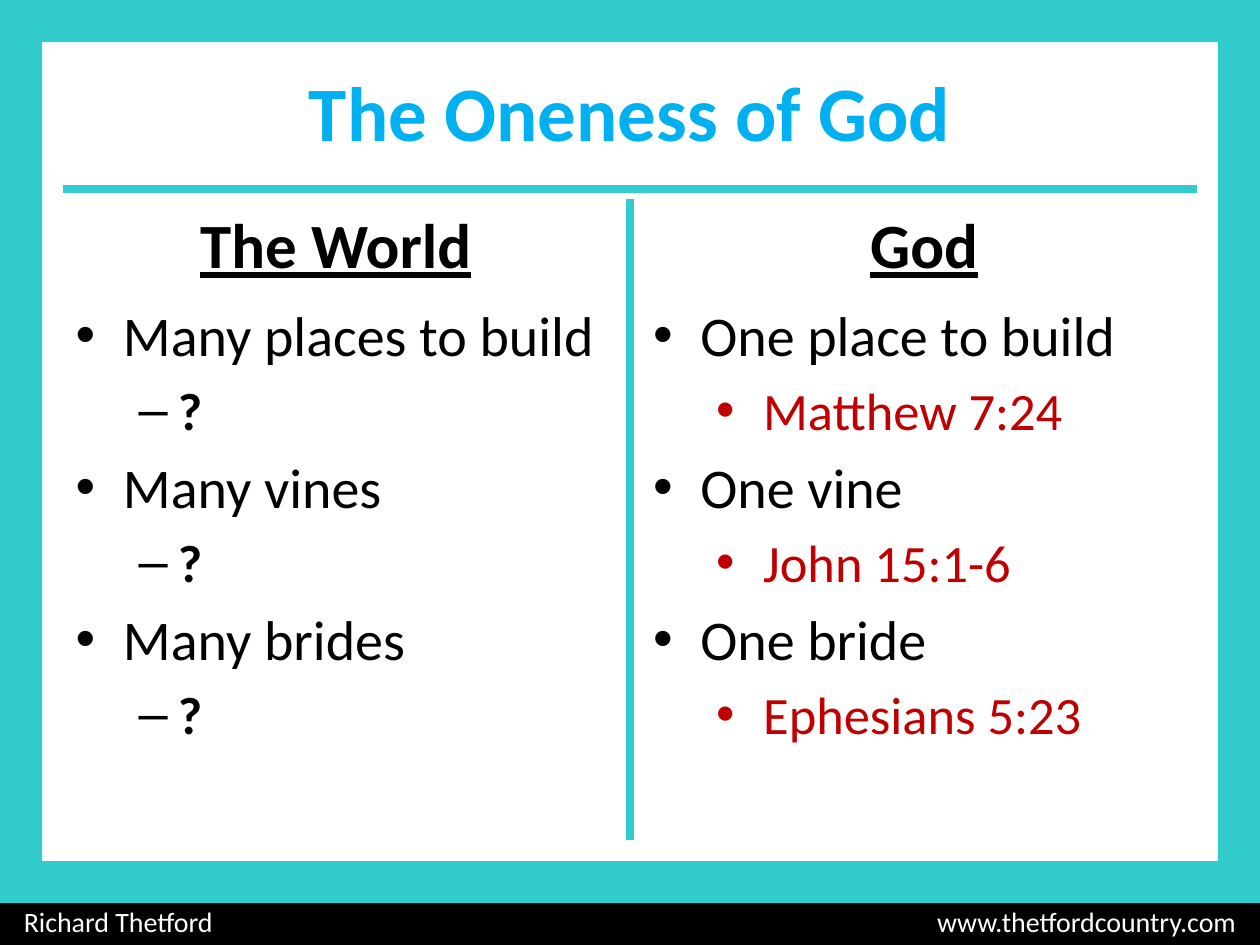
from lxml.etree import SubElement
from pptx import Presentation
from pptx.dml.color import RGBColor
from pptx.enum.shapes import MSO_CONNECTOR, MSO_SHAPE
from pptx.enum.text import MSO_ANCHOR, MSO_AUTO_SIZE, PP_ALIGN
from pptx.oxml.ns import qn
from pptx.util import Cm, Pt

TEAL = RGBColor(0x33, 0xCC, 0xCC)
SKY = RGBColor(0x00, 0xB0, 0xF0)
RED = RGBColor(0xC0, 0x00, 0x00)
BLACK = RGBColor(0, 0, 0)
WHITE = RGBColor(0xFF, 0xFF, 0xFF)

WIDTH, HEIGHT = 25.4, 19.05
EDGE = 0.85
MARGIN = 1.27
FOOTER_TOP = 18.1


class SlideBuilder:
    font_name = "Calibri"

    def __init__(self, slide):
        self.slide = slide

    def style(self, paragraph, size, color, bold=False, underline=None):
        font = paragraph.font
        font.name = self.font_name
        font.size = Pt(size)
        font.bold = bold
        font.underline = underline
        font.color.rgb = color

    def place(self, shape, left, top, width, height):
        shape.left, shape.top = Cm(left), Cm(top)
        shape.width, shape.height = Cm(width), Cm(height)

    def title(self, text, *box):
        title = self.slide.shapes.title
        self.place(title, *box)
        frame = title.text_frame
        frame.text = text
        frame.vertical_anchor = MSO_ANCHOR.MIDDLE
        frame.paragraphs[0].alignment = PP_ALIGN.CENTER
        self.style(frame.paragraphs[0], 44, SKY, bold=True)

    def band(self, color, *box):
        band = self.slide.shapes.add_shape(MSO_SHAPE.RECTANGLE, *map(Cm, box))
        band.shadow.inherit = False
        band.fill.solid()
        band.fill.fore_color.rgb = color
        band.line.fill.background()
        return band

    def footer(self, author, site, *box):
        inset = 0.48
        frame = self.band(BLACK, *box).text_frame
        frame.margin_left, frame.margin_right = Cm(inset), Cm(0.25)
        frame.vertical_anchor = MSO_ANCHOR.MIDDLE
        credit = frame.paragraphs[0]
        credit.text = f"{author}\t{site}"
        credit.alignment = PP_ALIGN.LEFT
        self.style(credit, 16, WHITE)
        tabs = credit._p.get_or_add_pPr()
        tab_list = tabs.makeelement(qn("a:tabLst"), {})
        tabs.insert(0, tab_list)
        SubElement(tab_list, qn("a:tab"), pos=str(Cm(WIDTH - 2 * inset)), algn="r")

    def rule(self, *ends):
        rule = self.slide.shapes.add_connector(MSO_CONNECTOR.STRAIGHT, *map(Cm, ends))
        rule.line.color.rgb = TEAL
        rule.line.width = Pt(4.5)
        SubElement(rule._element.spPr, qn("a:effectLst"))

    def heading(self, text, *box):
        frame = self.slide.shapes.add_textbox(*map(Cm, box)).text_frame
        frame.word_wrap = True
        frame.text = text
        frame.paragraphs[0].alignment = PP_ALIGN.CENTER
        self.style(frame.paragraphs[0], 36, BLACK, bold=True, underline=True)

    def points(self, index, pairs, answer_color, answer_bold, round_bullets, *box):
        body = self.slide.placeholders[index]
        self.place(body, *box)
        frame = body.text_frame
        frame.auto_size = MSO_AUTO_SIZE.NONE
        frame.text = "\n".join(line for pair in pairs for line in pair)
        for claim in frame.paragraphs[::2]:
            self.style(claim, 32, BLACK)
        for answer in frame.paragraphs[1::2]:
            answer.level = 1
            self.style(answer, 30, answer_color, bold=answer_bold)
            if round_bullets:
                self.round_bullet(answer)

    def round_bullet(self, paragraph):
        properties = paragraph._p.get_or_add_pPr()
        properties.set("marL", str(Cm(2.22)))
        properties.set("indent", str(Cm(-0.95)))
        bullet = properties.makeelement(qn("a:buChar"), {"char": "•"})
        properties.insert(0, bullet)


def main():
    deck = Presentation()
    deck.slide_width, deck.slide_height = Cm(WIDTH), Cm(HEIGHT)
    builder = SlideBuilder(deck.slides.add_slide(deck.slide_layouts[3]))

    content_width = WIDTH - 2 * MARGIN
    builder.title("The Oneness of God", MARGIN, EDGE, content_width, 2.75)

    list_top, list_width, list_height = 5.93, 11.22, 11.43
    builder.points(
        1,
        [("Many places to build", "?"), ("Many vines", "?"), ("Many brides", "?")],
        BLACK, True, False,
        MARGIN, list_top, list_width, list_height,
    )
    builder.points(
        2,
        [
            ("One place to build", "Matthew 7:24"),
            ("One vine", "John 15:1-6"),
            ("One bride", "Ephesians 5:23"),
        ],
        RED, False, True,
        WIDTH - MARGIN - list_width, list_top, list_width, list_height,
    )

    for left in (WIDTH - EDGE, 0):
        builder.band(TEAL, left, 0, EDGE, HEIGHT)
    builder.footer(
        "Richard Thetford", "www.thetfordcountry.com",
        0, FOOTER_TOP, WIDTH, HEIGHT - FOOTER_TOP,
    )
    for top in (0, 17.36):
        builder.band(TEAL, 0, top, WIDTH, EDGE)

    builder.rule(MARGIN, 3.81, WIDTH - MARGIN, 3.81)
    builder.rule(WIDTH / 2, 4.02, WIDTH / 2, 16.93)

    heading_width = 11
    for text, left in (("The World", MARGIN), ("God", WIDTH - MARGIN - heading_width)):
        builder.heading(text, left, 4.02, heading_width, 1.8)

    deck.save("out.pptx")


if __name__ == "__main__":
    main()
